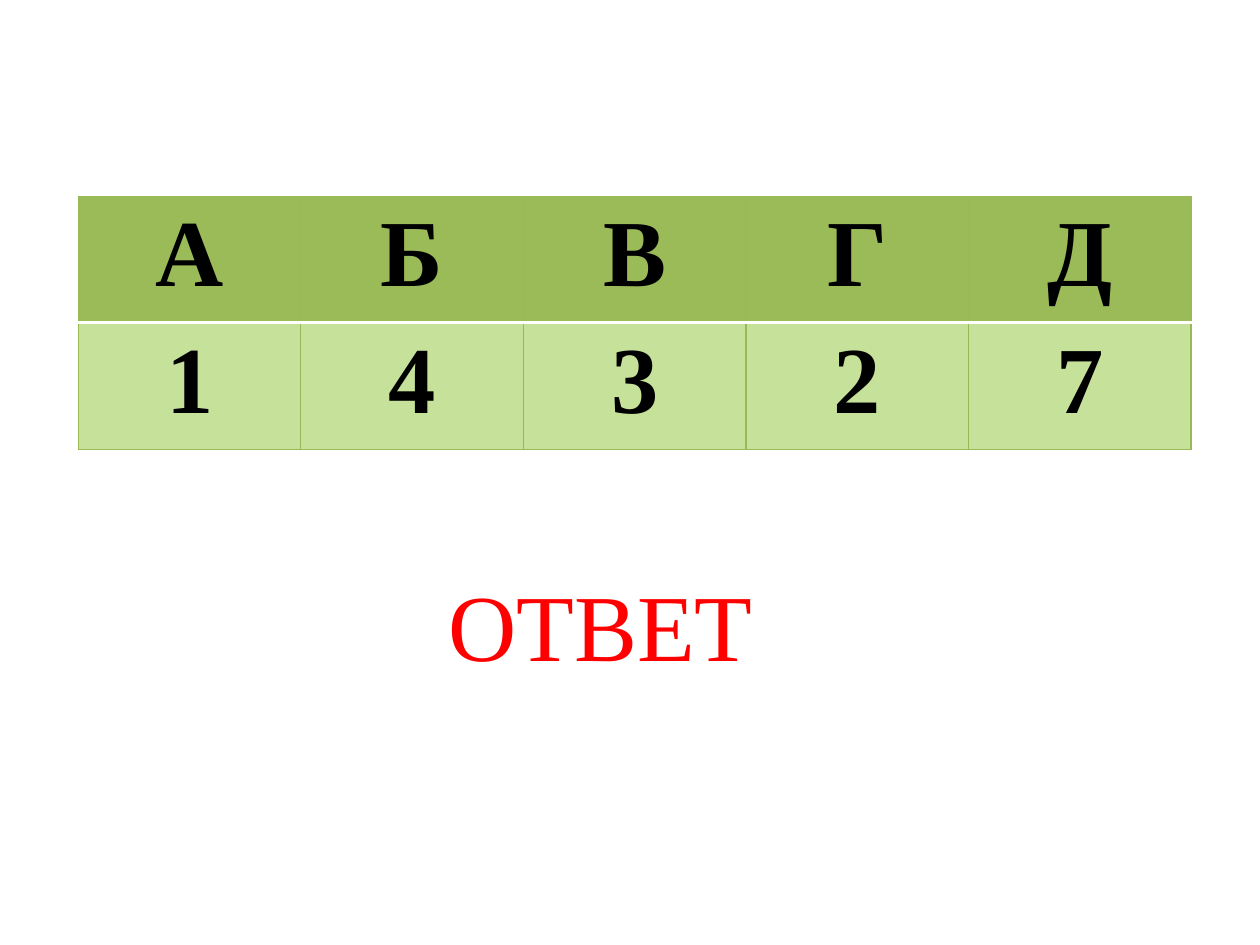
from lxml import etree
from pptx import Presentation
from pptx.dml.color import RGBColor
from pptx.enum.text import MSO_AUTO_SIZE, PP_ALIGN
from pptx.oxml.ns import qn
from pptx.util import Cm, Pt

CENTER = PP_ALIGN.CENTER
GROW = MSO_AUTO_SIZE.SHAPE_TO_FIT_TEXT
BLANK_LAYOUT = 6

COLORS = {
    "header": "9BBB59",
    "answer_row": "C6E29A",
    "grid": "98B955",
    "divider": "FFFFFF",
    "text": "000000",
    "caption": "FF0000",
}
FONT = {"name": "Times New Roman", "size": Pt(54)}

LETTERS = ["А", "Б", "В", "Г", "Д"]
ANSWERS = ["1", "4", "3", "2", "7"]


def write(paragraph, text, color, bold=False):
    run = paragraph.add_run()
    run.text = text
    for attribute, value in {**FONT, "bold": bold}.items():
        setattr(run.font, attribute, value)
    run.font.color.rgb = RGBColor.from_string(COLORS[color])


def add_border(cell, side, color, width):
    """Draw one side (L, R, T or B) of a cell; call in that order, before the fill."""
    properties = cell._tc.get_or_add_tcPr()
    line = etree.SubElement(properties, qn(f"a:ln{side}"), w=str(Pt(width)))
    fill = etree.SubElement(line, qn("a:solidFill"))
    etree.SubElement(fill, qn("a:srgbClr"), val=COLORS[color])


def format_cell(cell, text, fill, divider_side):
    for side in "LRTB":
        if side == divider_side:
            add_border(cell, side, "divider", 2)
        else:
            add_border(cell, side, "grid", 0.75)
    cell.fill.solid()
    cell.fill.fore_color.rgb = RGBColor.from_string(COLORS[fill])
    paragraph = cell.text_frame.paragraphs[0]
    paragraph.alignment = CENTER
    write(paragraph, text, "text", bold=True)


def add_answer_table(slide):
    rows = [(LETTERS, "header", "B"), (ANSWERS, "answer_row", "T")]
    table = slide.shapes.add_table(
        len(rows), len(LETTERS), Cm(1.58), Cm(3.96), Cm(22.43), Cm(5.1)
    ).table
    for row_index, (values, fill, divider_side) in enumerate(rows):
        for column_index, value in enumerate(values):
            cell = table.cell(row_index, column_index)
            format_cell(cell, value, fill, divider_side)


def add_caption(slide, text):
    caption = slide.shapes.add_textbox(Cm(2.39), Cm(11.3), Cm(20.04), Cm(2.57))
    frame = caption.text_frame
    settings = {"word_wrap": True, "auto_size": GROW, "margin_left": Cm(6.65)}
    for attribute, value in settings.items():
        setattr(frame, attribute, value)
    write(frame.paragraphs[0], text, "caption")


def main():
    presentation = Presentation()
    presentation.slide_width = Cm(25.4)
    presentation.slide_height = Cm(19.05)
    slide = presentation.slides.add_slide(presentation.slide_layouts[BLANK_LAYOUT])
    add_answer_table(slide)
    add_caption(slide, "ОТВЕТ")
    presentation.save("out.pptx")


if __name__ == "__main__":
    main()
